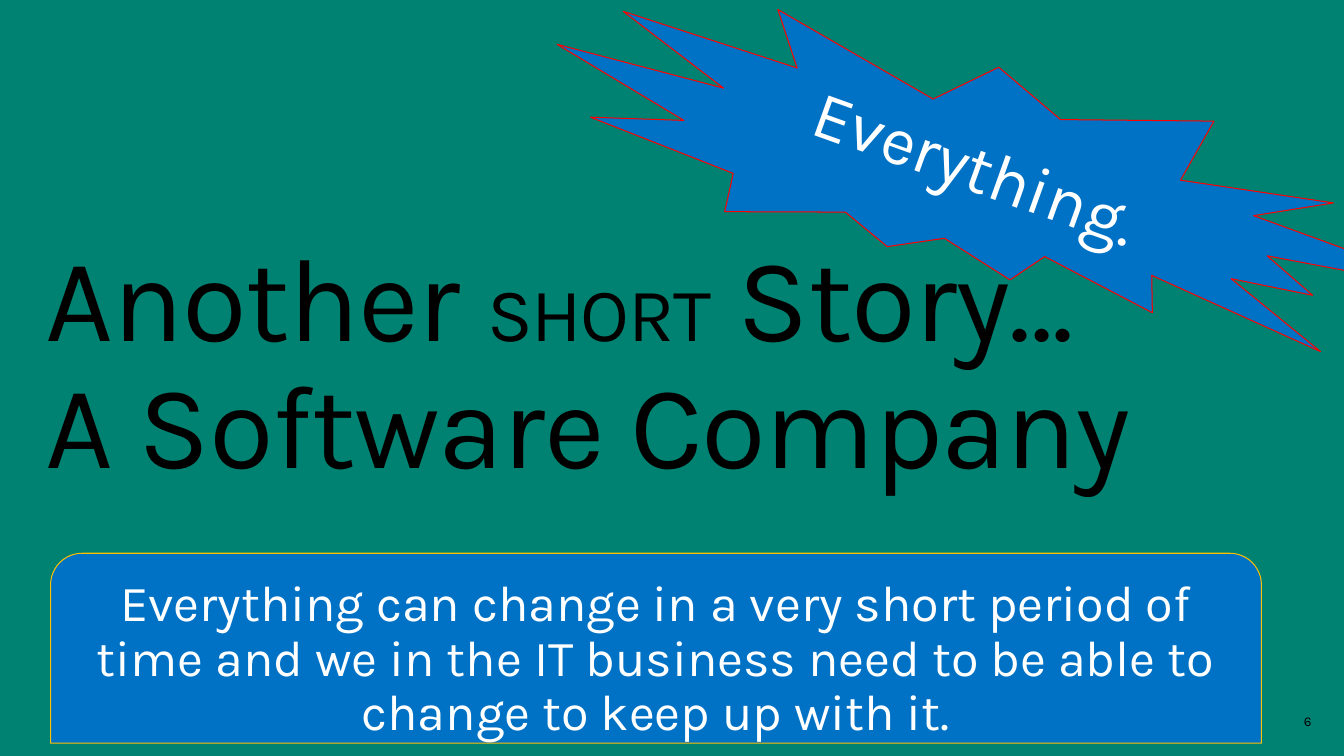
from pptx import Presentation
from pptx.dml.color import RGBColor
from pptx.enum.shapes import MSO_SHAPE as SHAPE
from pptx.enum.text import MSO_ANCHOR as ANCHOR, PP_ALIGN as ALIGN
from pptx.util import Cm, Pt


def rgb(value):
    return RGBColor.from_string(value)


def style(r, size, color):
    r.font.name = "Karla"
    r.font.size = Pt(size)
    r.font.color.rgb = rgb(color)


prs = Presentation()
prs.slide_width, prs.slide_height = Cm(34.54), Cm(19.43)
s = prs.slides.add_slide(prs.slide_layouts[6])
s.background.fill.solid()
s.background.fill.fore_color.rgb = rgb("008272")

title = s.shapes.add_textbox(Cm(0.76), Cm(5.89), Cm(33.02), Cm(5.08))
tf = title.text_frame
tf.word_wrap = True
tf.margin_left = tf.margin_right = Cm(0.41)
tf.margin_top = tf.margin_bottom = Cm(0.25)
p = tf.paragraphs[0]
p.line_spacing = 0.9
for text, size in [("Another ", 86.2), ("SHORT", 55.1), (" Story…", 86.2),
                   ("A Software Company", 86.2)]:
    if text.startswith("A Software"):
        p.add_line_break()
    r = p.add_run()
    r.text = text
    style(r, size, "000000")
    r.font._element.set("spc", "-100")

number = s.shapes.add_textbox(Cm(25.91), Cm(18.01), Cm(8.05), Cm(1.04))
tf = number.text_frame
tf.word_wrap = True
tf.vertical_anchor = ANCHOR.MIDDLE
p = tf.paragraphs[0]
p.text = "6"
p.alignment = ALIGN.RIGHT
style(p.runs[0], 9.8, "000000")

callouts = [
    (SHAPE.ROUND_2_SAME_RECTANGLE, (1.3, 14.22, 31.12, 4.88), 0, "FFC000", 36.7,
     "Everything can change in a very short period of time and we in the IT "
     "business need to be able to change to keep up with it."),
    (SHAPE.EXPLOSION2, (13.82, 1.42, 24.18, 6.43), 19.7, "FF0000", 49, "Everything."),
]
for kind, box, angle, outline, size, text in callouts:
    sp = s.shapes.add_shape(kind, *map(Cm, box))
    sp.rotation = angle
    sp.shadow.inherit = False
    sp.fill.solid()
    sp.fill.fore_color.rgb = rgb("0072C6")
    sp.line.color.rgb = rgb(outline)
    sp.line.width = Pt(0.75)
    tf = sp.text_frame
    tf.word_wrap = True
    tf.vertical_anchor = ANCHOR.TOP
    tf.margin_left = tf.margin_right = Cm(0.51)
    tf.margin_top = tf.margin_bottom = Cm(0.41)
    p = tf.paragraphs[0]
    p.text = text
    p.alignment = ALIGN.CENTER
    p.line_spacing = 0.9
    style(p.runs[0], size, "FFFFFF")

prs.save("out.pptx")
